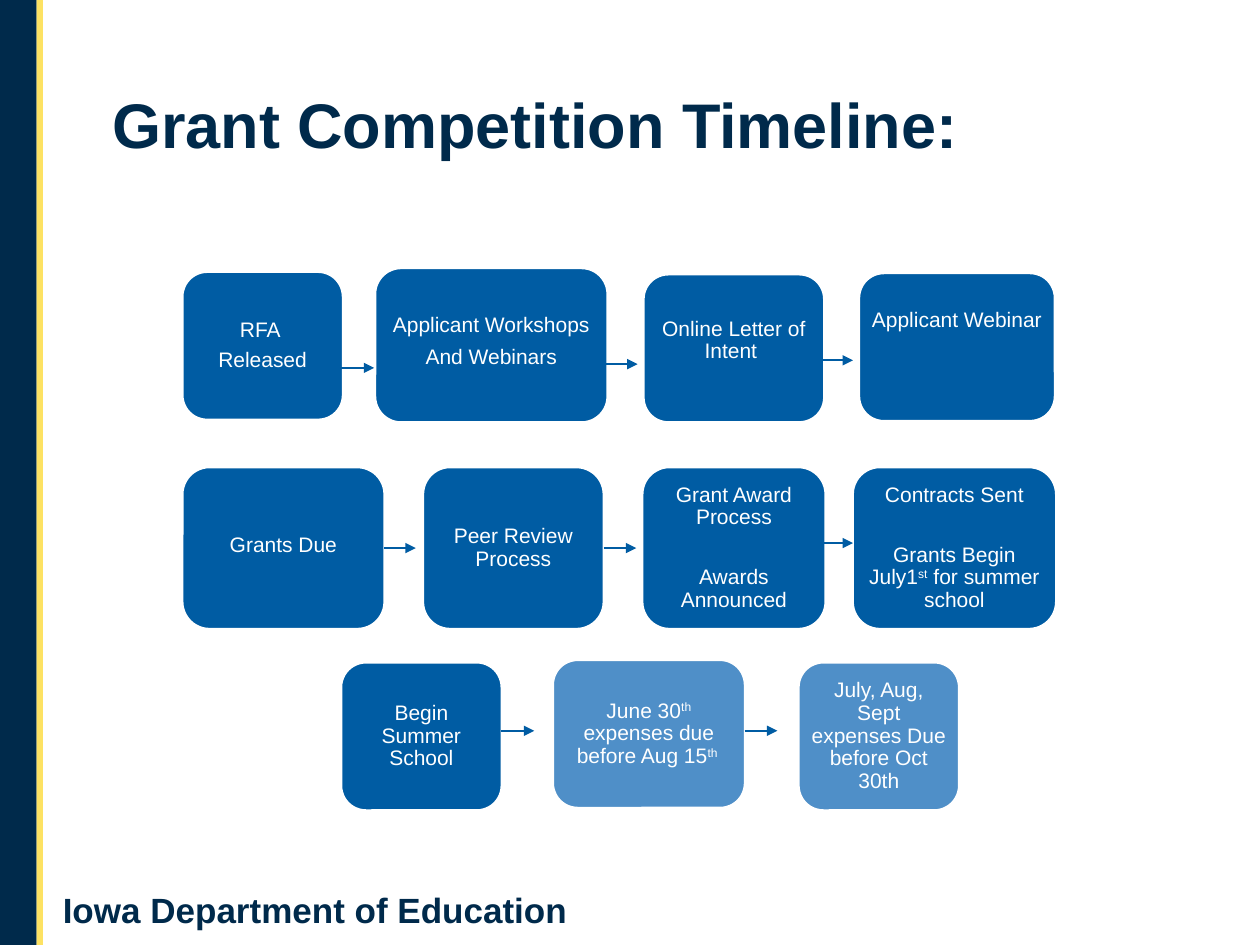
import pptx
import pptx.util
import pptx.dml.color
import pptx.enum.shapes
import pptx.enum.text
import pptx.oxml
import pptx.oxml.ns
from dataclasses import dataclass
from lxml import etree

COLORS = {"navy": "002A4B", "gold": "FDE263", "blue": "005CA3", "sky": "4F8FC8", "white": "FFFFFF"}
FONT = "Arial"
COLUMNS, ROWS = 100, 75
ARROW_COLUMNS = 2.6

presentation = pptx.Presentation()
presentation.slide_width = pptx.util.Inches(10)
presentation.slide_height = pptx.util.Inches(7.5)


@dataclass
class Step:
    """One timeline step, in grid cells from its row's corner."""
    left: float
    top: float
    width: float
    height: float
    paragraphs: list
    gap: float = 4.2
    lift: float = 0
    fill: str = "blue"


@dataclass
class Arrow:
    """An arrow in grid cells from its row's corner; joined ones start at a step's side."""
    left: float
    level: float
    joined: bool = False


def across(columns):
    """Turn grid columns into a length."""
    return round(presentation.slide_width * columns / COLUMNS)


def down(rows):
    """Turn grid rows into a length."""
    return round(presentation.slide_height * rows / ROWS)


def cell_box(left, top, width, height):
    """Turn a box in grid cells into lengths."""
    return across(left), down(top), across(width), down(height)


def color(name):
    """Look up a named colour."""
    return pptx.dml.color.RGBColor.from_string(COLORS[name])


def style_font(font, size, name, bold=False):
    """Set typeface, size, colour and weight."""
    font.name, font.size, font.bold = FONT, pptx.util.Pt(size), bold
    font.color.rgb = color(name)


def add_runs(paragraph, text):
    """Write text whose parts between carets are superscript."""
    for index, part in enumerate(text.split("^")):
        if part:
            run = paragraph.add_run()
            run.text = part
            if index % 2:
                run._r.get_or_add_rPr().set("baseline", "30000")


def add_side_band(slide, left, width, name):
    """Draw a full-height band."""
    band = slide.shapes.add_shape(
        pptx.enum.shapes.MSO_SHAPE.RECTANGLE, *cell_box(left, 0, width, ROWS))
    band.shadow.inherit = False
    band.fill.solid()
    band.fill.fore_color.rgb = color(name)
    band.line.fill.background()


def add_title(slide, box, text):
    """Place and format the title placeholder."""
    title = slide.shapes.title
    title.left, title.top, title.width, title.height = cell_box(*box)
    title.text_frame.text = text
    title.text_frame.vertical_anchor = pptx.enum.text.MSO_ANCHOR.MIDDLE
    paragraph = title.text_frame.paragraphs[0]
    paragraph.alignment = pptx.enum.text.PP_ALIGN.LEFT
    paragraph.line_spacing = 0.9
    style_font(paragraph.font, 36, "navy", True)


def add_footer(slide, box, text):
    """Write the department name at the foot."""
    frame = slide.shapes.add_textbox(*cell_box(*box)).text_frame
    frame.word_wrap = True
    frame.text = text
    style_font(frame.paragraphs[0].font, 20, "navy", True)


def add_step(slide, left, top, step):
    """Draw one rounded step with its text."""
    shape = slide.shapes.add_shape(
        pptx.enum.shapes.MSO_SHAPE.ROUNDED_RECTANGLE,
        *cell_box(left + step.left, top + step.top, step.width, step.height))
    shape.shadow.inherit = False
    shape.fill.solid()
    shape.fill.fore_color.rgb = color(step.fill)
    shape.line.color.rgb = color("white")
    shape.line.width = pptx.util.Pt(1)
    frame = shape.text_frame
    frame.word_wrap = True
    frame.vertical_anchor = pptx.enum.text.MSO_ANCHOR.MIDDLE
    frame.margin_left = frame.margin_right = across(0.4)
    frame.margin_top = down(0.4)
    frame.margin_bottom = down(0.4 + 2 * step.lift)
    for index, text in enumerate(step.paragraphs):
        paragraph = frame.add_paragraph() if index else frame.paragraphs[0]
        paragraph.alignment = pptx.enum.text.PP_ALIGN.CENTER
        paragraph.line_spacing = 0.9
        if index:
            paragraph.space_before = pptx.util.Pt(step.gap)
        add_runs(paragraph, text)
        style_font(paragraph.font, 12, "white")
    return shape


def add_arrow(slide, left, top, arrow, source):
    """Draw a level arrow, joined to its source step if asked."""
    start, level = left + arrow.left, down(top + arrow.level)
    connector = slide.shapes.add_connector(
        pptx.enum.shapes.MSO_CONNECTOR.STRAIGHT,
        across(start), level, across(start + ARROW_COLUMNS), level)
    if arrow.joined:
        connector.begin_connect(source, 3)
    connector.line.color.rgb = color("blue")
    connector.line.width = pptx.util.Pt(1)
    etree.SubElement(connector.line._get_or_add_ln(),
                     pptx.oxml.ns.qn("a:tailEnd"), type="triangle")
    etree.SubElement(connector._element.spPr, pptx.oxml.ns.qn("a:effectLst"))


def add_timeline_row(slide, left, top, steps, arrows):
    """Draw a row of steps and the arrows between them."""
    shapes = [add_step(slide, left, top, step) for step in steps]
    for source, arrow in zip(shapes, arrows):
        add_arrow(slide, left, top, arrow, source)


def build_timeline_slide():
    """Assemble the grant timeline slide."""
    slide = presentation.slides.add_slide(presentation.slide_layouts[5])
    add_side_band(slide, 0, 2.9, "navy")
    add_side_band(slide, 2.9, 0.5, "gold")
    add_footer(slide, (4, 70, 45.4, 4.4), "Iowa Department of Education")
    add_title(slide, (7.9, 4.7, 96.3, 10.9), "Grant Competition Timeline:")
    add_timeline_row(slide, 14.5, 21.3, [
        Step(0, 0.3, 12.7, 11.7, ["RFA ", "Released"]),
        Step(15.3, 0, 18.4, 12.2, ["Applicant Workshops", "And Webinars"], 5.5, 0.3),
        Step(36.6, 0.5, 14.3, 11.7, ["Online Letter of Intent "], lift=0.6),
        Step(53.7, 0.4, 15.5, 11.7, ["Applicant Webinar"], lift=2.1),
    ], [Arrow(12.6, 7.9), Arrow(33.5, 7.6), Arrow(50.6, 7.3)])
    add_timeline_row(slide, 14.5, 37.1, [
        Step(0, 0, 16, 12.8, ["Grants Due"], lift=0.2),
        Step(19.1, 0, 14.3, 12.8, ["Peer Review Process"]),
        Step(36.5, 0, 14.5, 12.8, ["Grant Award Process", "Awards Announced"], 21.4),
        Step(53.2, 0, 16.1, 12.8,
             ["Contracts Sent", "Grants Begin July1^st^ for summer school"], 21.4),
    ], [Arrow(15.9, 6.4, True), Arrow(33.4, 6.4, True), Arrow(50.6, 6)])
    add_timeline_row(slide, 27.1, 52.4, [
        Step(0, 0.2, 12.7, 11.7, ["Begin Summer School"]),
        Step(16.8, 0, 15.2, 11.7,
             ["June 30^th^ expenses due before Aug 15^th ^"], fill="sky"),
        Step(36.3, 0.2, 12.7, 11.7,
             ["July, Aug, Sept expenses Due before Oct 30th"], fill="sky"),
    ], [Arrow(12.7, 5.6), Arrow(32, 5.6)])


if __name__ == "__main__":
    build_timeline_slide()
    presentation.save("out.pptx")
